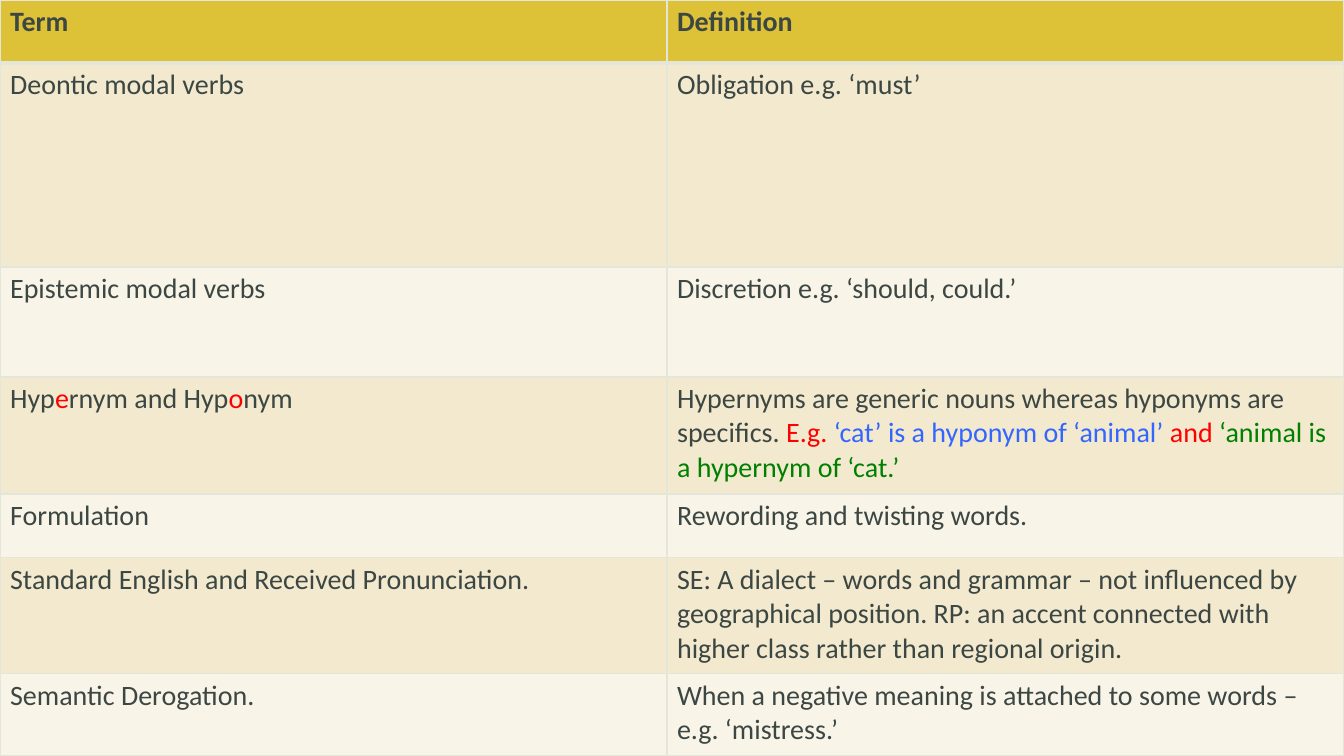
from lxml import etree
from pptx import Presentation
from pptx.dml.color import RGBColor
from pptx.oxml import parse_xml
from pptx.oxml.ns import nsdecls
from pptx.util import Pt

PX = 12192000 / 1344  # EMU in one px
COLORS = {
    "background": "E5E6DA",
    "header": "DDC237",
    "band_dark": "F2E9CE",
    "band_light": "F9F4E8",
    "text": "3C4743",
    "red": "FF0000",
    "blue": "3366FF",
    "green": "008000",
}
COLUMN_WIDTHS = [667, 677]
ROW_HEIGHTS = [63, 204, 110, 117, 64, 116, 82]

# A cell is a plain string, or a list of (text, color name) runs
GLOSSARY = [
    ("Term", "Definition"),
    ("Deontic modal verbs", "Obligation e.g. ‘must’"),
    ("Epistemic modal verbs", "Discretion e.g. ‘should, could.’"),
    (
        [("Hyp", "text"), ("e", "red"), ("rnym and Hyp", "text"),
         ("o", "red"), ("nym", "text")],
        [("Hypernyms are generic nouns whereas hyponyms are specifics. ", "text"),
         ("E.g. ", "red"), ("‘cat’ is a hyponym of ‘animal’ ", "blue"),
         ("and ", "red"), ("‘animal is a hypernym of ‘cat.’", "green")],
    ),
    ("Formulation", "Rewording and twisting words."),
    ("Standard English and Received Pronunciation.",
     "SE: A dialect – words and grammar – not influenced by geographical position. "
     "RP: an accent connected with higher class rather than regional origin."),
    ("Semantic Derogation.",
     "When a negative meaning is attached to some words – e.g. ‘mistress.’"),
]


def px(length):
    return round(length * PX)


def set_borders(cell, widths):
    properties = cell._tc.get_or_add_tcPr()
    for index, (side, width) in enumerate(zip("LRTB", widths)):
        properties.insert(index, parse_xml(
            f'<a:ln{side} {nsdecls("a")} w="{Pt(width)}"><a:solidFill>'
            f'<a:srgbClr val="{COLORS["background"]}"/></a:solidFill></a:ln{side}>'))


# Slide and background
presentation = Presentation()
presentation.slide_width, presentation.slide_height = px(1344), px(756)
slide = presentation.slides.add_slide(presentation.slide_layouts[6])
background = slide.background.fill
background.solid()
background.fore_color.rgb = RGBColor.from_string(COLORS["background"])

# Table grid
table = slide.shapes.add_table(
    len(ROW_HEIGHTS), len(COLUMN_WIDTHS), 0, 0, px(1344), px(756)).table
for column, width in zip(table.columns, COLUMN_WIDTHS):
    column.width = px(width)
for row, height in zip(table.rows, ROW_HEIGHTS):
    row.height = px(height)

# Cells: header row, then alternating bands
for row_index, entry in enumerate(GLOSSARY):
    is_header = row_index == 0
    band = "header" if is_header else "band_dark" if row_index % 2 else "band_light"
    for column_index, content in enumerate(entry):
        cell = table.cell(row_index, column_index)
        cell.fill.solid()
        cell.fill.fore_color.rgb = RGBColor.from_string(COLORS[band])
        set_borders(cell, [1, 1, 3 if row_index == 1 else 1, 3 if is_header else 1])
        paragraph = cell.text_frame.paragraphs[0]
        paragraph.font.name = "Calibri"
        paragraph.font.size = Pt(20)
        paragraph.font.bold = is_header
        runs = [(content, "text")] if isinstance(content, str) else content
        for text, color in runs:
            run = paragraph.add_run()
            run.text = text
            run.font.color.rgb = RGBColor.from_string(COLORS[color])

presentation.save("out.pptx")
